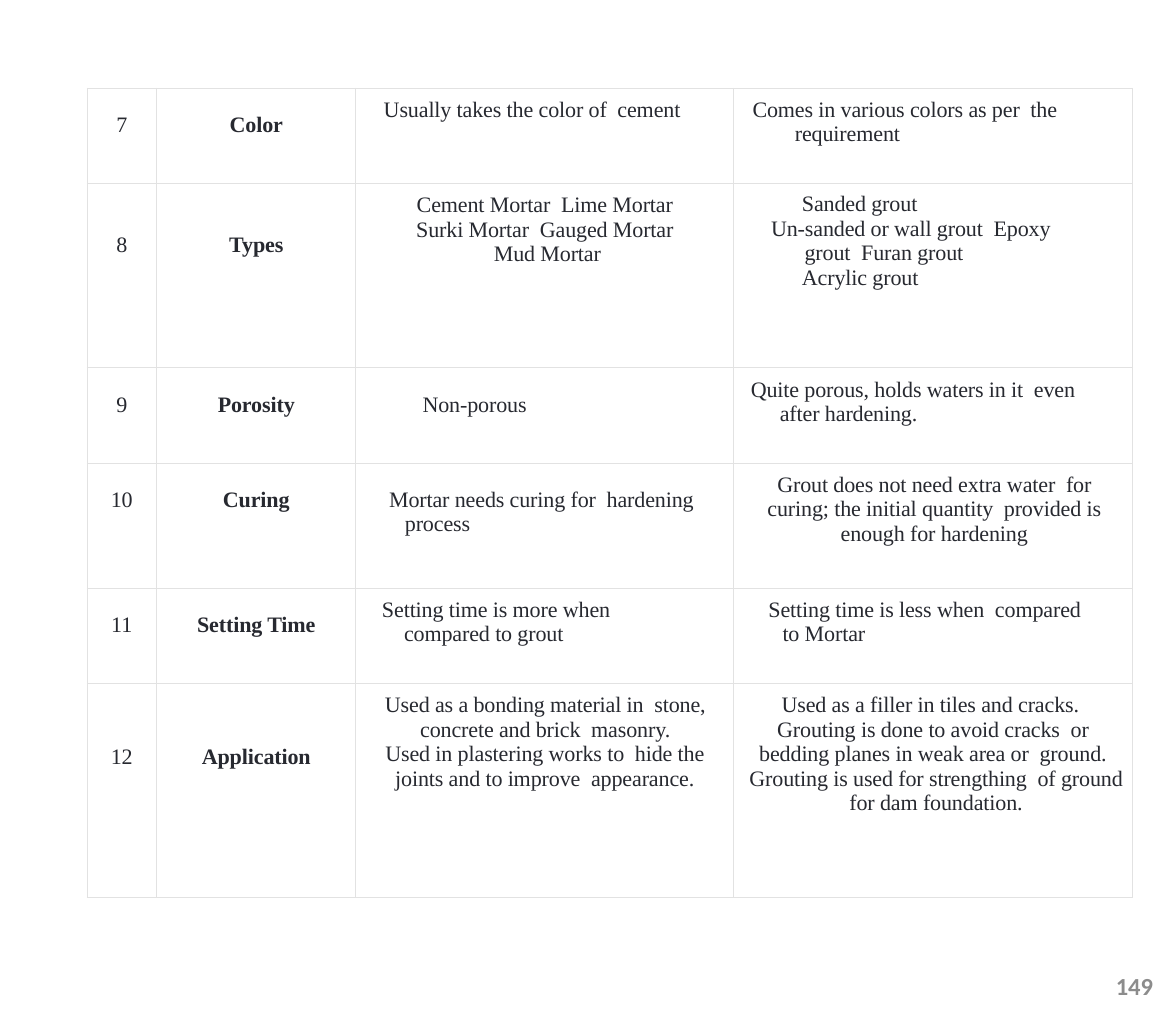
from dataclasses import dataclass

from lxml.etree import SubElement
from pptx import Presentation
from pptx.dml.color import RGBColor
from pptx.enum.text import MSO_ANCHOR as Anchor, PP_ALIGN as Align
from pptx.oxml.ns import qn
from pptx.util import Inches, Pt

INK = RGBColor(0x27, 0x29, 0x30)
RULE = RGBColor(0xE2, 0xE2, 0xE2)
PAGE_GREY = RGBColor(0x8C, 0x8C, 0x8C)

SLIDE_WIDTH, SLIDE_HEIGHT = 13.33, 11.69
TABLE_LEFT, TABLE_TOP = 0.99, 1.0
COLUMNS = [0.78, 2.26, 4.28, 4.53]
ROWS = [1.08, 2.09, 1.08, 1.42, 1.08, 2.43]
LINE = 0.28    # height of one text line
UPPER = 0.11   # top inset of the descriptions

BODY = {"name": "Times New Roman", "size": Pt(18), "bold": False}
LABEL = BODY | {"bold": True}
PAGE = {"name": "Calibri", "size": Pt(20), "bold": True}


@dataclass
class Entry:
    """One paragraph; centred unless a first-line shift is given."""
    text: str
    left: float = 0
    shift: float | None = None


@dataclass
class Description:
    entries: list[Entry]
    right: float = 0.11
    top: float = UPPER


@dataclass
class Property:
    number: str
    label: str
    label_top: float
    mortar: Description
    grout: Description


PROPERTIES = [
    Property(
        "7", "Color", LINE,
        Description([Entry("Usually takes the color of  cement", 0.91, -0.59)]),
        Description([Entry("Comes in various colors as per  the requirement", 0.7, -0.48)])),
    Property(
        "8", "Types", 2 * LINE,
        Description([Entry("Cement Mortar  Lime Mortar  Surki Mortar  Gauged Mortar  "
                           "Mud Mortar", 0.65)], right=0.58),
        Description([Entry("Sanded grout", 0.78, 0),
                     Entry("Un-sanded or wall grout  Epoxy grout  Furan grout", 0.81, -0.38),
                     Entry("Acrylic grout", 0.78, 0)], right=0.6, top=0.1)),
    Property(
        "9", "Porosity", LINE,
        Description([Entry("Non-porous", 0.76, 0)], top=LINE),
        Description([Entry("Quite porous, holds waters in it  even after hardening.",
                           0.53, -0.33)], right=0.4)),
    Property(
        "10", "Curing", LINE,
        Description([Entry("Mortar needs curing for  hardening process", 0.56, -0.18)],
                    right=0, top=LINE),
        Description([Entry("Grout does not need extra water  for curing; the initial "
                           "quantity  provided is enough for hardening", 0.14)])),
    Property(
        "11", "Setting Time", LINE,
        Description([Entry("Setting time is more when  compared to grout", 0.55, -0.25)],
                    right=0.5),
        Description([Entry("Setting time is less when  compared to Mortar", 0.56, -0.16)],
                    right=0.4)),
    Property(
        "12", "Application", 2.5 * LINE,
        Description([Entry("Used as a bonding material in  stone, concrete and brick  "
                           "masonry.", 0.19),
                     Entry("Used in plastering works to  hide the joints and to improve  "
                           "appearance.", 0.18)], right=0.17),
        Description([Entry("Used as a filler in tiles and cracks.  Grouting is done to avoid "
                           "cracks  or bedding planes in weak area or  ground.", 0.11),
                     Entry("Grouting is used for strengthing  of ground for dam "
                           "foundation.", 0.18)])),
]


def write_run(paragraph, text: str, style: dict, color: RGBColor):
    run = paragraph.add_run()
    run.text = text
    for key, value in style.items():
        setattr(run.font, key, value)
    run.font.color.rgb = color
    return run


def draw_borders(cell) -> None:
    properties = cell._tc.get_or_add_tcPr()
    for side in ("lnL", "lnR", "lnT", "lnB"):
        border = SubElement(properties, qn(f"a:{side}"), w=str(Pt(0.75)))
        fill = SubElement(border, qn("a:solidFill"))
        SubElement(fill, qn("a:srgbClr"), val=str(RULE))
    cell.fill.background()


def fill_cell(cell, content: Description, style: dict) -> None:
    layout = {"margin_left": 0, "margin_right": Inches(content.right),
              "margin_top": Inches(content.top), "margin_bottom": 0,
              "vertical_anchor": Anchor.TOP}
    for key, value in layout.items():
        setattr(cell, key, value)
    draw_borders(cell)
    frame = cell.text_frame
    for index, entry in enumerate(content.entries):
        paragraph = frame.add_paragraph() if index else frame.paragraphs[0]
        paragraph.alignment = Align.CENTER if entry.shift is None else Align.LEFT
        indents = paragraph._p.get_or_add_pPr()
        indents.set("marL", str(Inches(entry.left)))
        indents.set("indent", str(Inches(entry.shift or 0)))
        run = write_run(paragraph, entry.text, style, INK)
        run._r.get_or_add_rPr().set("spc", "-10")


def draw_comparison(slide) -> None:
    table = slide.shapes.add_table(
        len(ROWS), len(COLUMNS), Inches(TABLE_LEFT), Inches(TABLE_TOP),
        Inches(sum(COLUMNS)), Inches(sum(ROWS))).table
    table.first_row = table.horz_banding = False
    for column, width in zip(table.columns, COLUMNS):
        column.width = Inches(width)
    for row, height, item in zip(table.rows, ROWS, PROPERTIES):
        row.height = Inches(height)
        number = Description([Entry(item.number)], 0, item.label_top)
        label = Description([Entry(item.label, 0.01)], 0, item.label_top)
        contents = (number, label, item.mortar, item.grout)
        for cell, content, style in zip(row.cells, contents, (BODY, LABEL, BODY, BODY)):
            fill_cell(cell, content, style)


def draw_page_number(slide) -> None:
    box = slide.shapes.add_textbox(Inches(12.42), Inches(11.01), Inches(0.65), Inches(0.34))
    frame = box.text_frame
    frame.word_wrap = True
    for side in ("left", "right", "top", "bottom"):
        setattr(frame, f"margin_{side}", 0)
    frame.paragraphs[0].alignment = Align.RIGHT
    write_run(frame.paragraphs[0], "149", PAGE, PAGE_GREY)


def main() -> None:
    deck = Presentation()
    deck.slide_width, deck.slide_height = Inches(SLIDE_WIDTH), Inches(SLIDE_HEIGHT)
    slide = deck.slides.add_slide(deck.slide_layouts[6])
    # Mortar and grout comparison
    draw_comparison(slide)
    # Page number
    draw_page_number(slide)
    deck.save("out.pptx")


if __name__ == "__main__":
    main()
